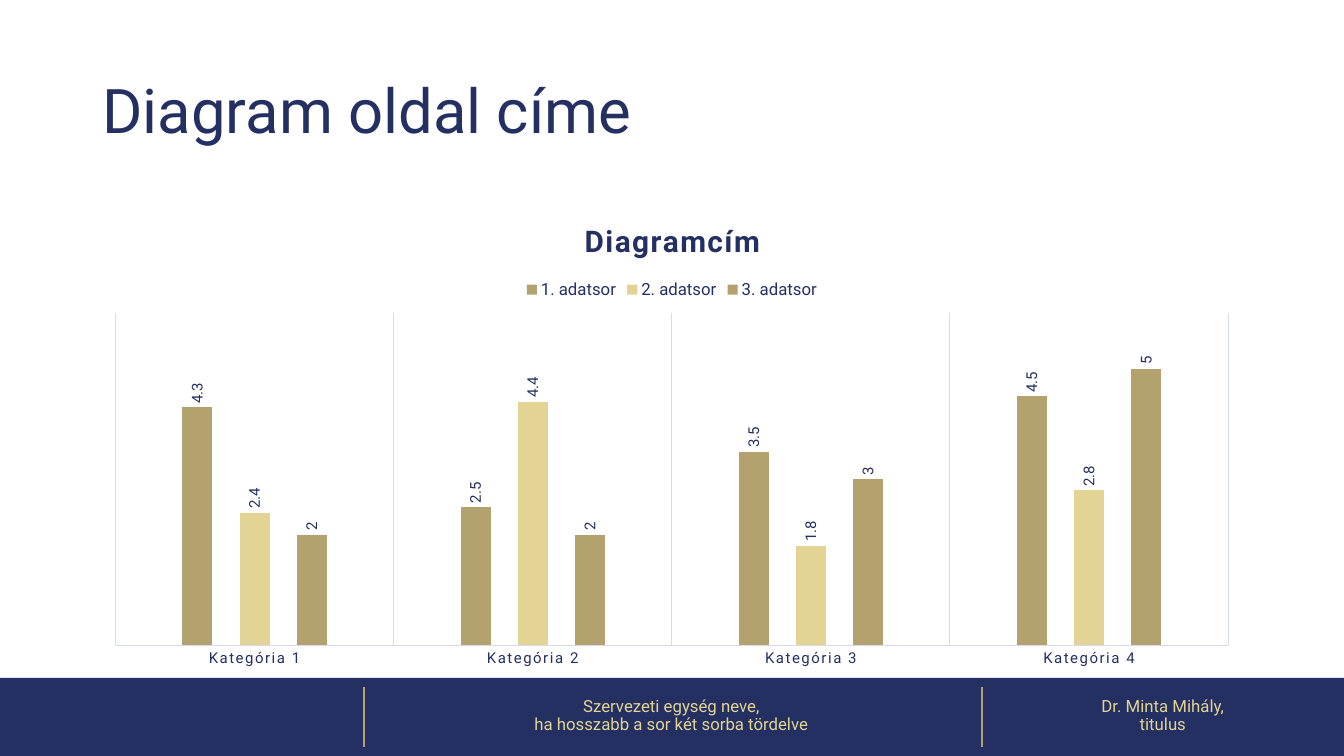
from dataclasses import dataclass

from lxml.etree import SubElement
from pptx import Presentation
from pptx.chart.data import CategoryChartData
from pptx.dml.color import RGBColor
from pptx.enum.chart import XL_CHART_TYPE as ChartType
from pptx.enum.chart import XL_LABEL_POSITION as LabelPosition
from pptx.enum.chart import XL_LEGEND_POSITION as LegendPosition
from pptx.enum.chart import XL_TICK_MARK as TickMark
from pptx.enum.shapes import MSO_CONNECTOR as Connector
from pptx.enum.shapes import MSO_SHAPE as Shape
from pptx.enum.text import MSO_ANCHOR as Anchor
from pptx.enum.text import MSO_AUTO_SIZE as AutoSize
from pptx.enum.text import PP_ALIGN as Align
from pptx.oxml import parse_xml
from pptx.oxml.ns import nsdecls, qn
from pptx.util import Cm, Pt


@dataclass(frozen=True)
class Theme:
    font: str = "Roboto"
    navy: str = "242F62"
    gold: str = "B3A16E"
    sand: str = "E3D496"
    grid: str = "D6DAF0"
    title_size: float = 44
    chart_title_size: float = 21.28
    body_size: float = 12
    label_size: float = 10.64
    letter_spacing: str = "120"


def color(code):
    return RGBColor.from_string(code)


def style_font(font, theme, size, code, bold=False):
    font.name = theme.font
    font.size = Pt(size)
    font.bold = bold
    font.color.rgb = color(code)


def write(frame, text, theme, size, code, align=Align.LEFT, bold=False, line_spacing=0.9):
    para = frame.paragraphs[0]
    para.text = text
    para.alignment = align
    para.line_spacing = line_spacing
    for span in para.runs:
        style_font(span.font, theme, size, code, bold)
    return para


def set_layout(element, before, **percents):
    for old in element.findall(qn("c:layout")):
        element.remove(old)
    layout = parse_xml(f"<c:layout {nsdecls('c')}/>")
    manual = SubElement(layout, qn("c:manualLayout"))
    if "w" in percents:
        SubElement(manual, qn("c:layoutTarget"), val="inner")
    for name in ("xMode", "yMode"):
        SubElement(manual, qn(f"c:{name}"), val="edge")
    for name, percent in percents.items():
        SubElement(manual, qn(f"c:{name}"), val=f"{percent / 100:.4f}")
    follower = element.find(qn(before)) if before else element[0]
    follower.addprevious(layout)


class Page:
    def __init__(self, deck, theme):
        self.theme = theme
        self.slide = deck.slides.add_slide(deck.slide_layouts[5])
        self.shapes = self.slide.shapes

    def title(self, text, left, top, width, height):
        box = self.shapes.title
        box.left, box.top, box.width, box.height = map(Cm, (left, top, width, height))
        frame = box.text_frame
        frame.auto_size = AutoSize.NONE
        frame.vertical_anchor = Anchor.MIDDLE
        write(frame, text, self.theme, self.theme.title_size, self.theme.navy)

    def band(self, left, top, width, height):
        box = self.shapes.add_shape(Shape.RECTANGLE, *map(Cm, (left, top, width, height)))
        box.shadow.inherit = False
        box.fill.solid()
        box.fill.fore_color.rgb = color(self.theme.navy)
        box.line.fill.background()

    def divider(self, x, top, bottom):
        line = self.shapes.add_connector(Connector.STRAIGHT, *map(Cm, (x, top, x, bottom)))
        line.line.color.rgb = color(self.theme.gold)
        line.line.width = Pt(1.5)
        SubElement(line._element.spPr, qn("a:effectLst"))

    def caption(self, text, left, top, width, height):
        box = self.shapes.add_textbox(*map(Cm, (left, top, width, height)))
        frame = box.text_frame
        frame.word_wrap = True
        frame.vertical_anchor = Anchor.MIDDLE
        write(frame, text, self.theme, self.theme.body_size, self.theme.sand, align=Align.CENTER)

    def column_chart(self, title, categories, series, left, top, width, height):
        theme = self.theme
        data = CategoryChartData()
        data.categories = categories
        for name, values, _ in series:
            data.add_series(name, values)
        chart = self.shapes.add_chart(
            ChartType.COLUMN_CLUSTERED, *map(Cm, (left, top, width, height)), data
        ).chart
        style_font(chart.font, theme, theme.label_size, theme.navy)

        chart.has_title = True
        heading = write(chart.chart_title.text_frame, title, theme, theme.chart_title_size,
                        theme.navy, align=Align.CENTER, bold=True, line_spacing=1.0)
        heading.runs[0].font._element.set("spc", theme.letter_spacing)
        set_layout(chart.chart_title._element, "c:overlay", x=42, y=3.03)

        chart.has_legend = True
        chart.legend.position = LegendPosition.TOP
        chart.legend.include_in_layout = False
        style_font(chart.legend.font, theme, theme.body_size, theme.navy)
        set_layout(chart.legend._element, "c:overlay", x=37, y=15.6)

        plot = chart.plots[0]
        plot.vary_by_categories = False
        plot.gap_width = 444
        plot.overlap = -90
        set_layout(chart._chartSpace.chart.plotArea, None, x=1.99, y=23.55, w=96, h=70)
        for bars, (_, _, code) in zip(plot.series, series):
            bars.format.fill.solid()
            bars.format.fill.fore_color.rgb = color(code)
            self.value_labels(bars.data_labels)

        axis = chart.category_axis
        axis.major_tick_mark = axis.minor_tick_mark = TickMark.NONE
        axis.has_major_gridlines = True
        for line in (axis.format.line, axis.major_gridlines.format.line):
            line.color.rgb = color(theme.grid)
            line.width = Pt(0.75)
        font = axis.tick_labels.font
        style_font(font, theme, theme.label_size, theme.navy)
        font._element.set("spc", theme.letter_spacing)

        scale = chart.value_axis
        scale.minimum_scale, scale.maximum_scale = 0, 6
        scale.has_major_gridlines = False
        scale.visible = False

    def value_labels(self, labels):
        labels.show_value = True
        labels.position = LabelPosition.OUTSIDE_END
        style_font(labels.font, self.theme, self.theme.label_size, self.theme.navy)
        body = labels._element.find(qn("c:txPr")).find(qn("a:bodyPr"))
        body.set("rot", "-5400000")
        body.set("vert", "horz")


def main():
    theme = Theme()
    deck = Presentation()
    deck.slide_width, deck.slide_height = Cm(33.87), Cm(19.05)
    page = Page(deck, theme)

    caption_top, caption_height = 17.06, 1.99
    first_divider, second_divider = 9.17, 24.74
    page.band(0, 17.08, 33.87, 1.97)
    for x in (first_divider, second_divider):
        page.divider(x, 17.32, 18.82)
    page.caption("Szervezeti egység neve,\nha hosszabb a sor két sorba tördelve",
                 9.12, caption_top, 15.6, caption_height)
    page.caption("Dr. Minta Mihály,\ntitulus",
                 second_divider, caption_top, 9.13, caption_height)

    left, width = 2.33, 29.21
    page.title("Diagram oldal címe", left, 1.01, width, 3.68)
    page.column_chart(
        "Diagramcím",
        [f"Kategória {number}" for number in range(1, 5)],
        [
            ("1. adatsor", (4.3, 2.5, 3.5, 4.5), theme.gold),
            ("2. adatsor", (2.4, 4.4, 1.8, 2.8), theme.sand),
            ("3. adatsor", (2, 2, 3, 5), theme.gold),
        ],
        left, 5.08, width, 11.96,
    )
    deck.save("out.pptx")


if __name__ == "__main__":
    main()
